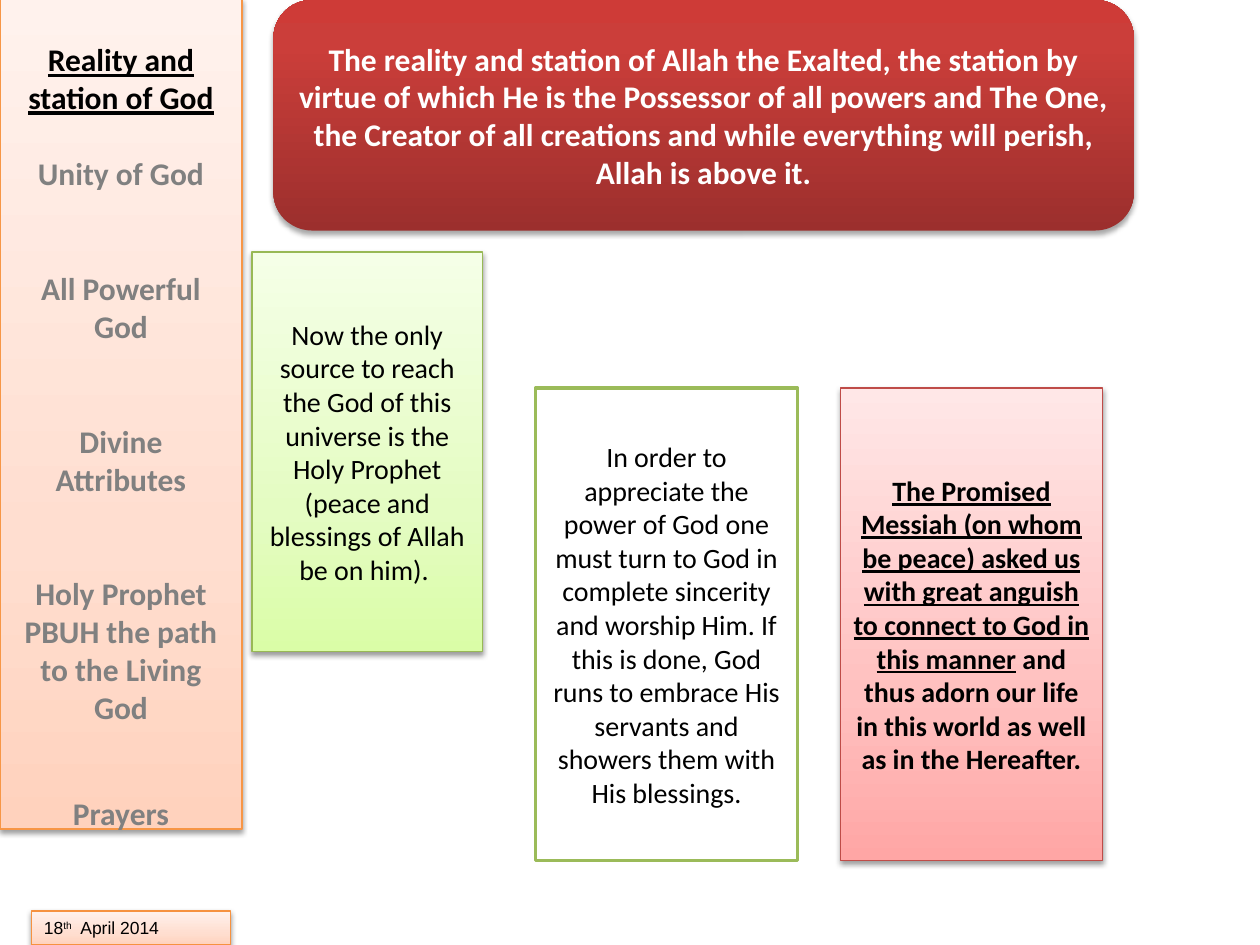
from lxml.etree import SubElement
from pptx import Presentation
from pptx.dml.color import RGBColor
from pptx.enum.shapes import MSO_SHAPE
from pptx.enum.text import MSO_ANCHOR, MSO_AUTO_SIZE, PP_ALIGN
from pptx.oxml.ns import qn
from pptx.util import Inches, Pt

PEACH = ["FFD2BD", "FFDED0", "FFF2ED"]
LIME = ["DAFDA7", "E4FCC2", "F5FFE7"]
PINK = ["FFA6A5", "FFC0BF", "FFE7E7"]
RED = ["9C2F2D", "CB3E3A", "CE3B37"]

# Topic and the space before it in points
TOPICS = [
    ("Reality and station of God", 0),
    ("Unity of God", 22),
    ("All Powerful God", 44),
    ("Divine Attributes", 44),
    ("Holy Prophet PBUH the path to the Living God", 44),
    ("Prayers", 39),
]
TITLE = ("The reality and station of Allah the Exalted, the station by virtue of "
         "which He is the Possessor of all powers and The One, the Creator of all "
         "creations and while everything will perish, Allah is above it.")
SOURCE = ("Now the only source to reach the God of this universe is the Holy "
          "Prophet (peace and blessings of Allah be on him). ")
TURN = ("In order to appreciate the power of God one must turn to God in complete "
        "sincerity and worship Him. If this is done, God runs to embrace His "
        "servants and showers them with His blessings.")
ASKED = ("The Promised Messiah (on whom be peace) asked us with great anguish to "
         "connect to God in this manner")
ADORN = " and thus adorn our life in this world as well as in the Hereafter."
DATE = [("18", 0), ("th", 30000), ("  April 2014", 0)]

# Text cards: left, top, width, height, fill, line, line width, runs
CARDS = [
    (2, 2, 1.83, 3.17, LIME, "98B955", 0.75, [(SOURCE, {})]),
    (4.25, 3.08, 2.08, 3.75, "FFFFFF", "9BBB59", 2, [(TURN, {})]),
    (6.67, 3.08, 2.08, 3.75, PINK, "BF4C48", 0.75,
     [(ASKED, {"bold": True, "under": True}), (ADORN, {"bold": True})]),
]


def rgb(code):
    return RGBColor.from_string(code)


def color(parent, code):
    return SubElement(parent, qn("a:srgbClr"), val=code)


def shade(shape, codes, mid):
    """Fill with three colours, running from the bottom edge to the top."""
    shape.fill.gradient()
    shape.fill.gradient_angle = 90
    stops = shape._element.spPr.find(".//" + qn("a:gsLst"))
    for old in list(stops):
        stops.remove(old)
    for code, place in zip(codes, (0, mid, 100)):
        color(SubElement(stops, qn("a:gs"), pos=str(place * 1000)), code)


def drop(shape, alpha, dist):
    """Cast a soft shadow straight down."""
    effects = shape._element.spPr.find(qn("a:effectLst"))
    outer = SubElement(effects, qn("a:outerShdw"), blurRad=str(Pt(3.1)),
                       dist=str(Pt(dist)), dir="5400000", rotWithShape="0")
    SubElement(color(outer, "000000"), qn("a:alpha"), val=str(alpha * 1000))


def box(slide, at, fill, line=None, width=0.75, kind=MSO_SHAPE.RECTANGLE,
        mid=35, alpha=38, dist=1.6):
    shape = slide.shapes.add_shape(kind, *map(Inches, at))
    shape.shadow.inherit = False
    if isinstance(fill, str):
        shape.fill.solid()
        shape.fill.fore_color.rgb = rgb(fill)
    else:
        shade(shape, fill, mid)
        drop(shape, alpha, dist)
    if line:
        shape.line.color.rgb = rgb(line)
        shape.line.width = Pt(width)
    else:
        shape.line.fill.background()
    shape.text_frame.vertical_anchor = MSO_ANCHOR.MIDDLE
    shape.text_frame.paragraphs[0].alignment = PP_ALIGN.CENTER
    return shape


def write(para, text, size=16, face="Calibri", ink="000000", bold=False,
          under=False, base=0):
    run = para.add_run()
    run.text = text
    font = run.font
    font.size, font.name, font.bold, font.underline = Pt(size), face, bold, under
    font.color.rgb = rgb(ink)
    if base:
        font._element.set("baseline", str(base))


def topics(slide):
    frame = box(slide, (0, -0.01, 1.92, 6.59), PEACH, "F79646").text_frame
    frame.vertical_anchor = MSO_ANCHOR.TOP
    frame.margin_top = Inches(0.33)
    for i, (text, gap) in enumerate(TOPICS):
        para = frame.add_paragraph() if i else frame.paragraphs[0]
        para.alignment = PP_ALIGN.CENTER
        para.space_before = Pt(gap)
        write(para, text, size=18, bold=True, under=i == 0,
              ink="808080" if i else "000000")


def date(slide):
    frame = box(slide, (0.25, 7.23, 1.58, 0.27), PEACH, "F69240").text_frame
    frame.vertical_anchor = MSO_ANCHOR.TOP
    frame.word_wrap = False
    frame.auto_size = MSO_AUTO_SIZE.SHAPE_TO_FIT_TEXT
    para = frame.paragraphs[0]
    para.alignment = PP_ALIGN.LEFT
    for text, base in DATE:
        write(para, text, size=10, face="Arial", base=base)


def main():
    deck = Presentation()
    deck.slide_width, deck.slide_height = Inches(10), Inches(7.5)
    slide = deck.slides.add_slide(deck.slide_layouts[6])
    topics(slide)
    date(slide)
    banner = box(slide, (2.17, 0, 6.83, 1.83), RED, mid=80, alpha=35, dist=1.8,
                 kind=MSO_SHAPE.ROUNDED_RECTANGLE)
    write(banner.text_frame.paragraphs[0], TITLE, size=18, ink="FFFFFF", bold=True)
    for *at, fill, line, width, runs in CARDS:
        para = box(slide, at, fill, line, width).text_frame.paragraphs[0]
        for text, form in runs:
            write(para, text, **form)
    deck.save("out.pptx")


if __name__ == "__main__":
    main()
